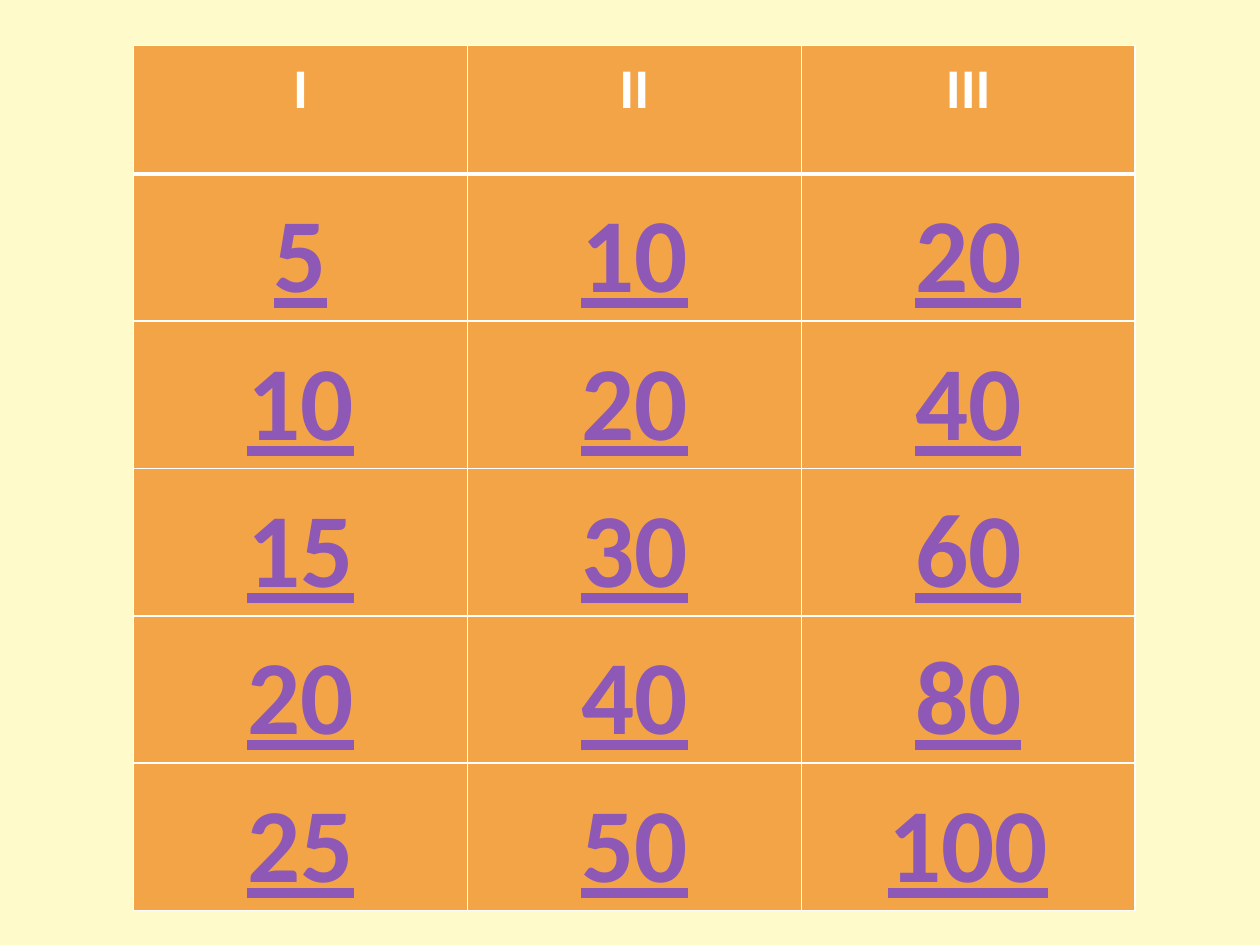
"""Build a quiz board slide with three columns of point values."""
from dataclasses import dataclass

import pptx
import pptx.dml.color
import pptx.enum.text
import pptx.util
from lxml import etree
from pptx.oxml.ns import qn

COLORS = {"background": "FEFAC9", "cell": "F3A447", "white": "FFFFFF", "points": "8E58B6"}
SLIDE_WIDTH = pptx.util.Inches(10)
SLIDE_HEIGHT = pptx.util.Inches(7.5)
LEFT, TOP = pptx.util.Inches(1.06), pptx.util.Inches(0.36)
COLUMN_WIDTH, ROW_HEIGHT = pptx.util.Inches(2.65), pptx.util.Inches(1.02)
LEVELS = 5
THIN, THICK = 1, 3


@dataclass(frozen=True)
class Category:
    heading: str
    step: int


@dataclass(frozen=True)
class CellStyle:
    size: int
    color: str
    underline: bool
    top: int
    bottom: int


CATEGORIES = [Category("I", 5), Category("II", 10), Category("III", 20)]
HEADER = CellStyle(32, "white", False, THIN, THICK)
FIRST_POINTS = CellStyle(60, "points", True, THICK, THIN)
POINTS = CellStyle(60, "points", True, THIN, THIN)


def rgb(name: str) -> pptx.dml.color.RGBColor:
    return pptx.dml.color.RGBColor.from_string(COLORS[name])


def add_border(cell, side: str, width: int) -> None:
    line = etree.SubElement(cell._tc.get_or_add_tcPr(), qn(f"a:ln{side}"),
                            w=str(pptx.util.Pt(width)))
    fill = etree.SubElement(line, qn("a:solidFill"))
    etree.SubElement(fill, qn("a:srgbClr"), val=COLORS["white"])


def fill_cell(cell, text: str, style: CellStyle) -> None:
    cell.margin_left = cell.margin_right = pptx.util.Inches(0.07)
    cell.margin_top = cell.margin_bottom = 0
    borders = {"L": THIN, "R": THIN, "T": style.top, "B": style.bottom}
    for side, width in borders.items():
        add_border(cell, side, width)
    cell.fill.solid()
    cell.fill.fore_color.rgb = rgb("cell")
    cell.text = text
    paragraph = cell.text_frame.paragraphs[0]
    paragraph.alignment = pptx.enum.text.PP_ALIGN.CENTER
    paragraph.line_spacing = 1.15
    font = paragraph.runs[0].font
    font.name = "Calibri"
    font.size = pptx.util.Pt(style.size)
    font.bold = True
    font.underline = style.underline
    font.color.rgb = rgb(style.color)


def add_board(slide) -> None:
    columns, rows = len(CATEGORIES), LEVELS + 1
    table = slide.shapes.add_table(rows, columns, LEFT, TOP, COLUMN_WIDTH * columns,
                                   ROW_HEIGHT * rows).table
    for column, category in enumerate(CATEGORIES):
        table.columns[column].width = COLUMN_WIDTH
        fill_cell(table.cell(0, column), category.heading, HEADER)
        for level in range(1, rows):
            style = FIRST_POINTS if level == 1 else POINTS
            fill_cell(table.cell(level, column), str(category.step * level), style)


def main() -> None:
    presentation = pptx.Presentation()
    presentation.slide_width, presentation.slide_height = SLIDE_WIDTH, SLIDE_HEIGHT
    slide = presentation.slides.add_slide(presentation.slide_layouts[6])
    slide.background.fill.solid()
    slide.background.fill.fore_color.rgb = rgb("background")
    add_board(slide)
    presentation.save("out.pptx")


if __name__ == "__main__":
    main()
